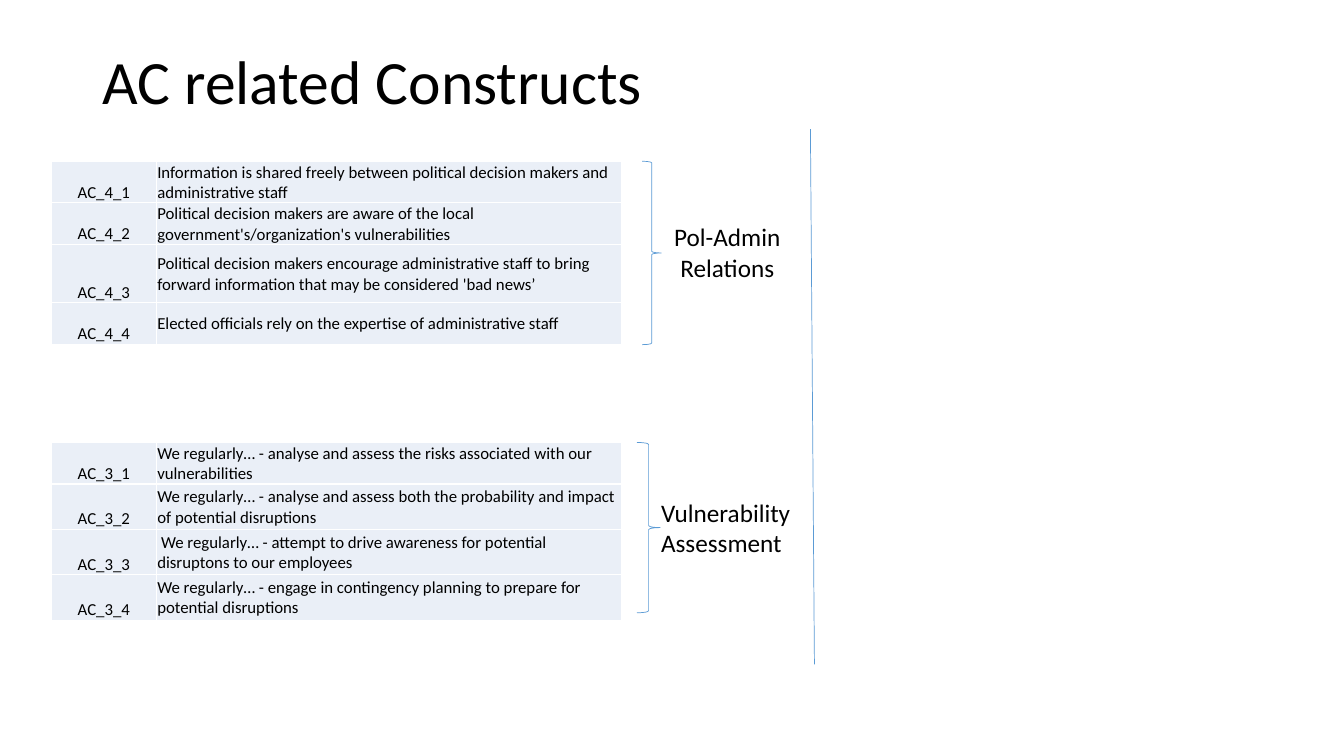
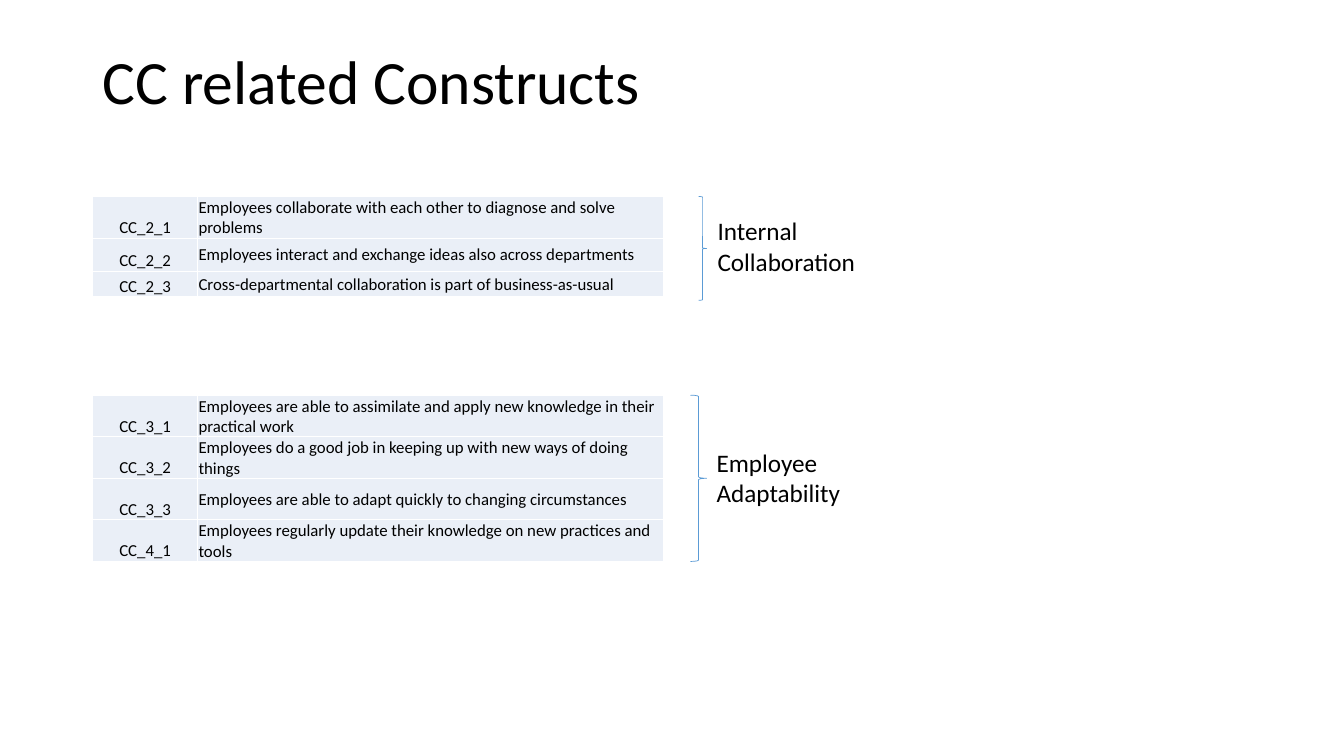
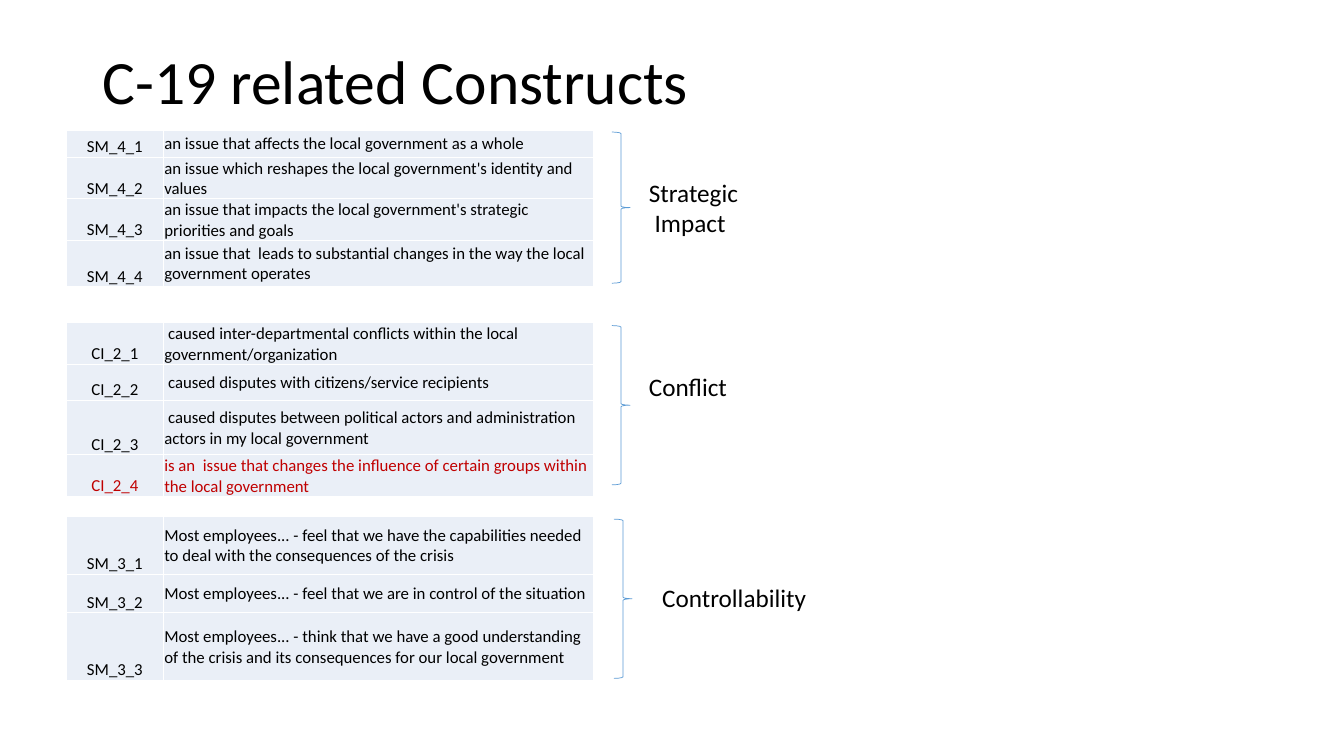
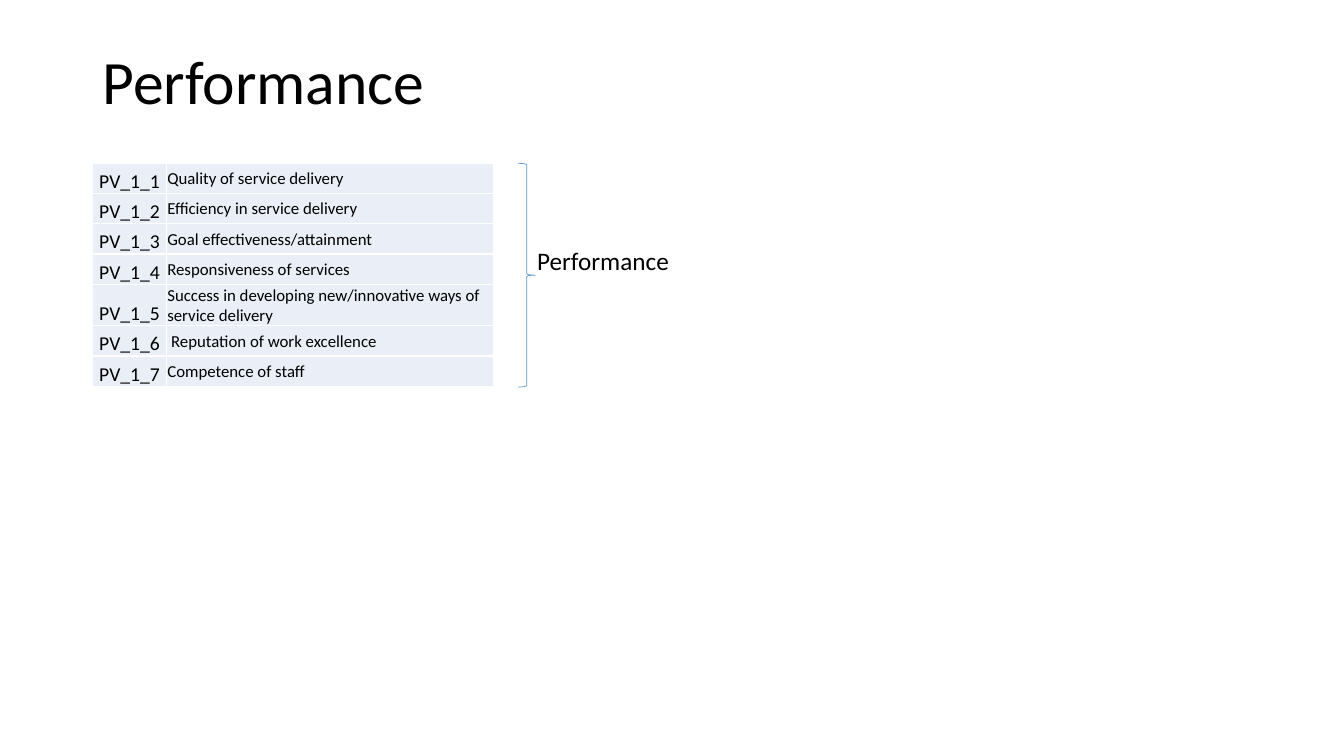
from lxml import etree
from pptx import Presentation
from pptx.dml.color import RGBColor
from pptx.enum.shapes import MSO_CONNECTOR, MSO_SHAPE
from pptx.enum.text import MSO_ANCHOR, PP_ALIGN
from pptx.oxml import parse_xml
from pptx.oxml.ns import nsdecls, qn
from pptx.util import Inches, Pt

BRACE = MSO_SHAPE.RIGHT_BRACE
STRAIGHT = MSO_CONNECTOR.STRAIGHT
LEFT, CENTER = PP_ALIGN.LEFT, PP_ALIGN.CENTER
MIDDLE, BOTTOM = MSO_ANCHOR.MIDDLE, MSO_ANCHOR.BOTTOM

COLORS = {"text": "000000", "alert": "C00000", "cell": "EAEFF7",
          "border": "FFFFFF", "line": "5B9BD5"}
FONT = "Calibri"
TITLE_SIZE, LABEL_SIZE, CELL_SIZE = 44, 18, 12
ALERT_CODES = {"CI_2_4"}
TWO_LINES = 5.5

deck = Presentation()
deck.slide_width, deck.slide_height = Inches(13.333), Inches(7.5)
BLANK = deck.slide_layouts[6]


def place(left, top, width, height):
    across, down = deck.slide_width / 100, deck.slide_height / 100
    return [round(share) for share in
            (left * across, top * down, width * across, height * down)]


def write(frame, lines, size, align=LEFT, color="text", spacing=None):
    for index, line in enumerate(lines):
        para = frame.paragraphs[0] if index == 0 else frame.add_paragraph()
        para.alignment = align
        if spacing:
            para.line_spacing = spacing
        span = para.add_run()
        span.text = line
        span.font.size = Pt(size)
        span.font.name = FONT
        span.font.color.rgb = RGBColor.from_string(COLORS[color])


PAGES = [
    {"title": "AC related Constructs", "left": 3.83, "columns": (7.8, 34.65),
     "code_size": 12, "divider": (60.3, 17.07, 60.6, 87.87),
     "groups": [
         {"top": 21.33, "brace": (47.78, 21.33, 1.43, 24.27),
          "label": ["Pol-Admin", "Relations"], "label_at": (49.35, 28.67, 9.53),
          "align": CENTER, "rows": [
              ("AC_4_1", "Information is shared freely between political decision makers and administrative staff", TWO_LINES),
              ("AC_4_2", "Political decision makers are aware of the local government's/organization's vulnerabilities", TWO_LINES),
              ("AC_4_3", "Political decision makers encourage administrative staff to bring forward information that may be considered 'bad news’", 7.73),
              ("AC_4_4", "Elected officials rely on the expertise of administrative staff", TWO_LINES)]},
         {"top": 58.53, "brace": (47.4, 58.53, 1.73, 22.53),
          "label": ["Vulnerability", "Assessment"], "label_at": (48.45, 65.07, 11.25),
          "rows": [
              ("AC_3_1", "We regularly… - analyse and assess the risks associated with our vulnerabilities", TWO_LINES),
              ("AC_3_2", "We regularly… - analyse and assess both the probability and impact of potential disruptions", 6),
              ("AC_3_3", " We regularly… - attempt to drive awareness for potential disruptons to our employees", 6),
              ("AC_3_4", "We regularly… - engage in contingency planning to prepare for potential disruptions", 6)]}]},
    {"title": "CC related Constructs", "left": 6.9, "columns": (7.8, 34.65),
     "code_size": 12,
     "groups": [
         {"top": 26, "brace": (51.98, 26, 0.6, 13.73),
          "label": ["Internal", "Collaboration"], "label_at": (52.65, 27.87, 11.85),
          "rows": [
              ("CC_2_1", "Employees collaborate with each other to diagnose and solve problems", TWO_LINES),
              ("CC_2_2", "Employees interact and exchange ideas also across departments", 4.4),
              ("CC_2_3", "Cross-departmental collaboration is part of business-as-usual", 3.33)]},
         {"top": 52.27, "brace": (51.38, 52.27, 1.2, 22),
          "label": ["Employee", "Adaptability"], "label_at": (52.58, 58.53, 10.8),
          "rows": [
              ("CC_3_1", "Employees are able to assimilate and apply new knowledge in their practical work", TWO_LINES),
              ("CC_3_2", "Employees do a good job in keeping up with new ways of doing things", TWO_LINES),
              ("CC_3_3", "Employees are able to adapt quickly to changing circumstances", TWO_LINES),
              ("CC_4_1", "Employees regularly update their knowledge on new practices and tools", TWO_LINES)]}]},
    {"title": "C-19 related Constructs", "left": 4.95, "columns": (7.2, 32.03),
     "code_size": 12,
     "groups": [
         {"top": 17.2, "brace": (45.53, 17.47, 1.35, 20),
          "label": ["Strategic", " Impact"], "label_at": (47.55, 22.8, 8.18),
          "rows": [
              ("SM_4_1", "an issue that affects the local government as a whole", 3.6),
              ("SM_4_2", "an issue which reshapes the local government's identity and values", TWO_LINES),
              ("SM_4_3", "an issue that impacts the local government's strategic priorities and goals", TWO_LINES),
              ("SM_4_4", "an issue that  leads to substantial changes in the way the local government operates", 6.13)]},
         {"top": 42.67, "brace": (45.53, 43.07, 1.35, 21.07),
          "label": ["Conflict"], "label_at": (47.55, 48.4, 7.43),
          "rows": [
              ("CI_2_1", " caused inter-departmental conflicts within the local government/organization", TWO_LINES),
              ("CI_2_2", " caused disputes with citizens/service recipients", 4.8),
              ("CI_2_3", " caused disputes between political actors and administration actors in my local government", 7.2),
              ("CI_2_4", "is an  issue that changes the influence of certain groups within the local government", TWO_LINES)]},
         {"top": 68.27, "brace": (45.68, 68.67, 1.35, 21.07),
          "label": ["Controllability"], "label_at": (48.53, 76.4, 12.3),
          "rows": [
              ("SM_3_1", "Most employees... - feel that we have the capabilities needed to deal with the consequences of the crisis", 7.73),
              ("SM_3_2", "Most employees... - feel that we are in control of the situation", 5.07),
              ("SM_3_3", "Most employees... - think that we have a good understanding of the crisis and its consequences for our local government", 8.93)]}]},
    {"title": "Performance", "left": 6.9, "columns": (5.48, 24.38),
     "code_size": 14,
     "groups": [
         {"top": 21.6, "brace": (38.55, 21.6, 1.28, 29.6),
          "label": ["Performance"], "label_at": (39.23, 31.73, 11.4),
          "rows": [
              ("PV_1_1", "Quality of service delivery", 4),
              ("PV_1_2", "Efficiency in service delivery", 4),
              ("PV_1_3", "Goal effectiveness/attainment", 4),
              ("PV_1_4", "Responsiveness of services", 4),
              ("PV_1_5", "Success in developing new/innovative ways of service delivery", TWO_LINES),
              ("PV_1_6", " Reputation of work excellence", 4),
              ("PV_1_7", "Competence of staff", 4)]}]},
]

for content in PAGES:
    page = deck.slides.add_slide(BLANK)
    title = page.shapes.add_textbox(*place(6.9, 5.33, 86.25, 11.73)).text_frame
    title.word_wrap = True
    title.vertical_anchor = MIDDLE
    write(title, [content["title"]], TITLE_SIZE, spacing=0.9)

    for group in content["groups"]:
        rows, columns = group["rows"], content["columns"]
        total = sum(row[2] for row in rows)
        area = place(content["left"], group["top"], sum(columns), total)
        table = page.shapes.add_table(len(rows), len(columns), *area).table
        table.first_row = table.horz_banding = False
        for index, width in enumerate(columns):
            table.columns[index].width = place(0, 0, width, 0)[2]
        for row_index, (code, statement, height) in enumerate(rows):
            table.rows[row_index].height = place(0, 0, 0, height)[3]
            color = "alert" if code in ALERT_CODES else "text"
            styles = [(code, content["code_size"], CENTER, BOTTOM),
                      (statement, CELL_SIZE, LEFT, MIDDLE)]
            for column_index, (words, size, align, anchor) in enumerate(styles):
                cell = table.cell(row_index, column_index)
                cell.margin_left = cell.margin_right = cell.margin_top = Inches(0.01)
                cell.margin_bottom = 0
                cell.vertical_anchor = anchor
                cell.fill.solid()
                cell.fill.fore_color.rgb = RGBColor.from_string(COLORS["cell"])
                write(cell.text_frame, [words], size, align, color)
                properties = cell._tc.get_or_add_tcPr()
                for position, side in enumerate(("lnL", "lnR", "lnT", "lnB")):
                    border = parse_xml(
                        f'<a:{side} {nsdecls("a")} w="{Pt(1)}"><a:solidFill>'
                        f'<a:srgbClr val="{COLORS["border"]}"/></a:solidFill></a:{side}>')
                    properties.insert(position, border)

        brace = page.shapes.add_shape(BRACE, *place(*group["brace"]))
        brace.shadow.inherit = False
        brace.fill.background()
        brace.line.color.rgb = RGBColor.from_string(COLORS["line"])
        brace.line.width = Pt(0.5)

        label_height = 1.2 + 4.13 * len(group["label"])
        label = page.shapes.add_textbox(*place(*group["label_at"], label_height)).text_frame
        label.word_wrap = False
        write(label, group["label"], LABEL_SIZE, group.get("align", LEFT))

    if "divider" in content:
        divider = page.shapes.add_connector(STRAIGHT, *place(*content["divider"]))
        divider.line.color.rgb = RGBColor.from_string(COLORS["line"])
        divider.line.width = Pt(0.5)
        etree.SubElement(divider._element.spPr, qn("a:effectLst"))

deck.save("out.pptx")
